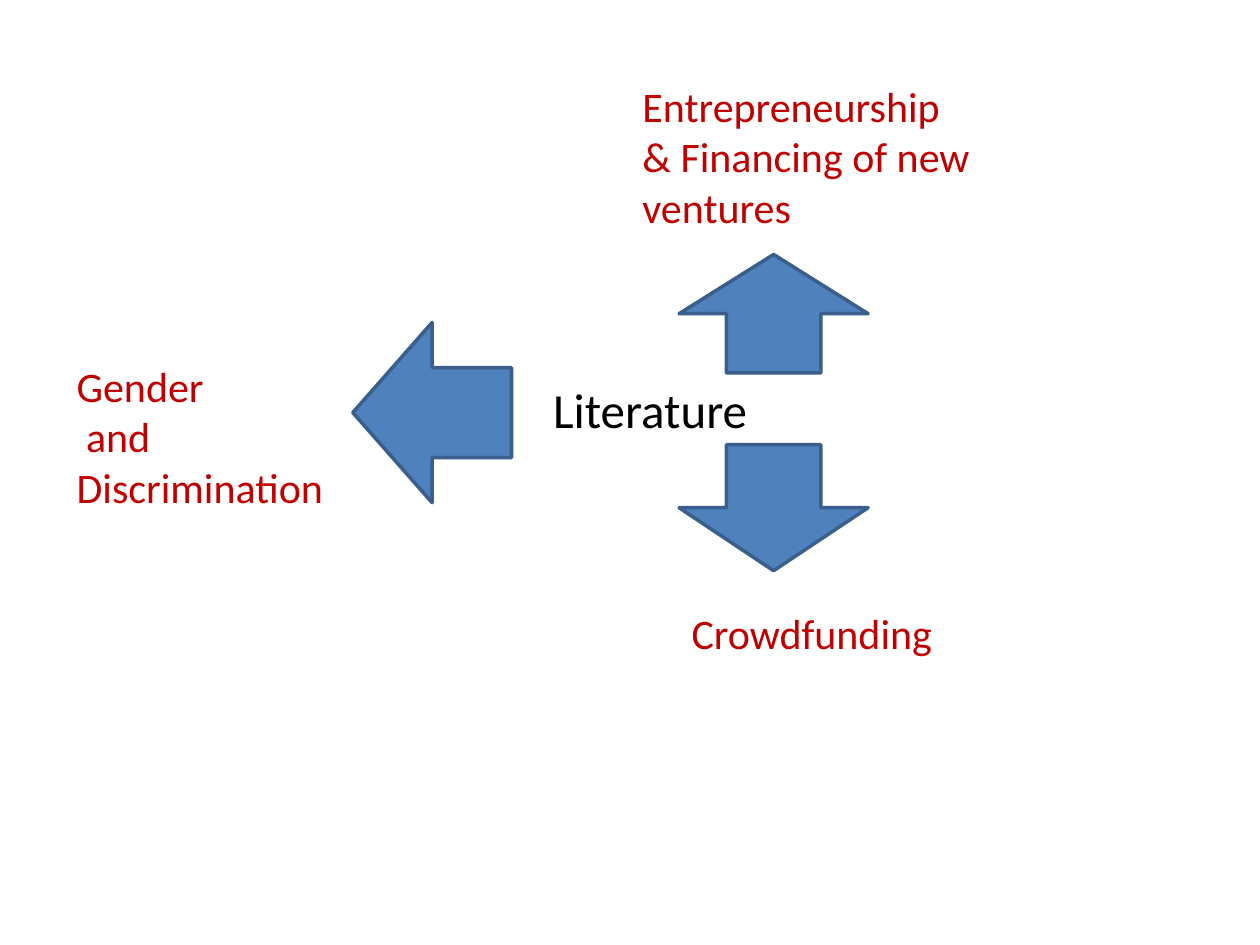
import pptx
import pptx.dml.color
import pptx.enum.shapes
import pptx.enum.text
import pptx.util

Inches = pptx.util.Inches
Arrow = pptx.enum.shapes.MSO_SHAPE
Align = pptx.enum.text.PP_ALIGN

COLORS = {"topic": "C00000", "center": "000000", "arrow": "4F81BD", "outline": "3A5F8C"}


def rgb(name):
    return pptx.dml.color.RGBColor.from_string(COLORS[name])


class SlideBuilder:
    """Holds the style and the current slide."""

    font_name = "Calibri"
    outline_width = 2

    def __init__(self, slide):
        self.slide = slide

    def add_text(self, box, lines, color="topic", size=24, align=Align.LEFT):
        shape = self.slide.shapes.add_textbox(*map(Inches, box))
        frame = shape.text_frame
        frame.word_wrap = True
        frame.auto_size = pptx.enum.text.MSO_AUTO_SIZE.SHAPE_TO_FIT_TEXT
        frame.text = "\n".join(lines)
        font_format = {"name": self.font_name, "size": pptx.util.Pt(size)}
        for paragraph in frame.paragraphs:
            paragraph.alignment = align
            for run in paragraph.runs:
                for attribute, value in font_format.items():
                    setattr(run.font, attribute, value)
                run.font.color.rgb = rgb(color)

    def add_arrow(self, kind, box):
        shape = self.slide.shapes.add_shape(kind, *map(Inches, box))
        shape.shadow.inherit = False
        shape.fill.solid()
        shape.fill.fore_color.rgb = rgb("arrow")
        shape.line.color.rgb = rgb("outline")
        shape.line.width = pptx.util.Pt(self.outline_width)


def main():
    presentation = pptx.Presentation()
    presentation.slide_width = Inches(10)
    presentation.slide_height = Inches(7.5)
    builder = SlideBuilder(presentation.slides.add_slide(presentation.slide_layouts[6]))

    # Central theme
    builder.add_text((3.43, 2.96, 3.46, 0.57), ["Literature"], "center", 28, Align.CENTER)

    # Lower branch
    builder.add_text((5.39, 4.77, 2.99, 0.5), ["Crowdfunding"])
    builder.add_arrow(Arrow.DOWN_ARROW, (5.39, 3.53, 1.5, 1))

    # Left branch
    builder.add_arrow(Arrow.LEFT_ARROW, (2.8, 2.56, 1.26, 1.43))
    builder.add_text((0.51, 2.81, 2.2, 1.31), ["Gender", " and Discrimination"])

    # Upper branch
    builder.add_arrow(Arrow.UP_ARROW, (5.39, 2.02, 1.5, 0.94))
    builder.add_text((5, 0.59, 2.91, 1.31), ["Entrepreneurship", "& Financing of new ventures"])

    presentation.save("out.pptx")


if __name__ == "__main__":
    main()
